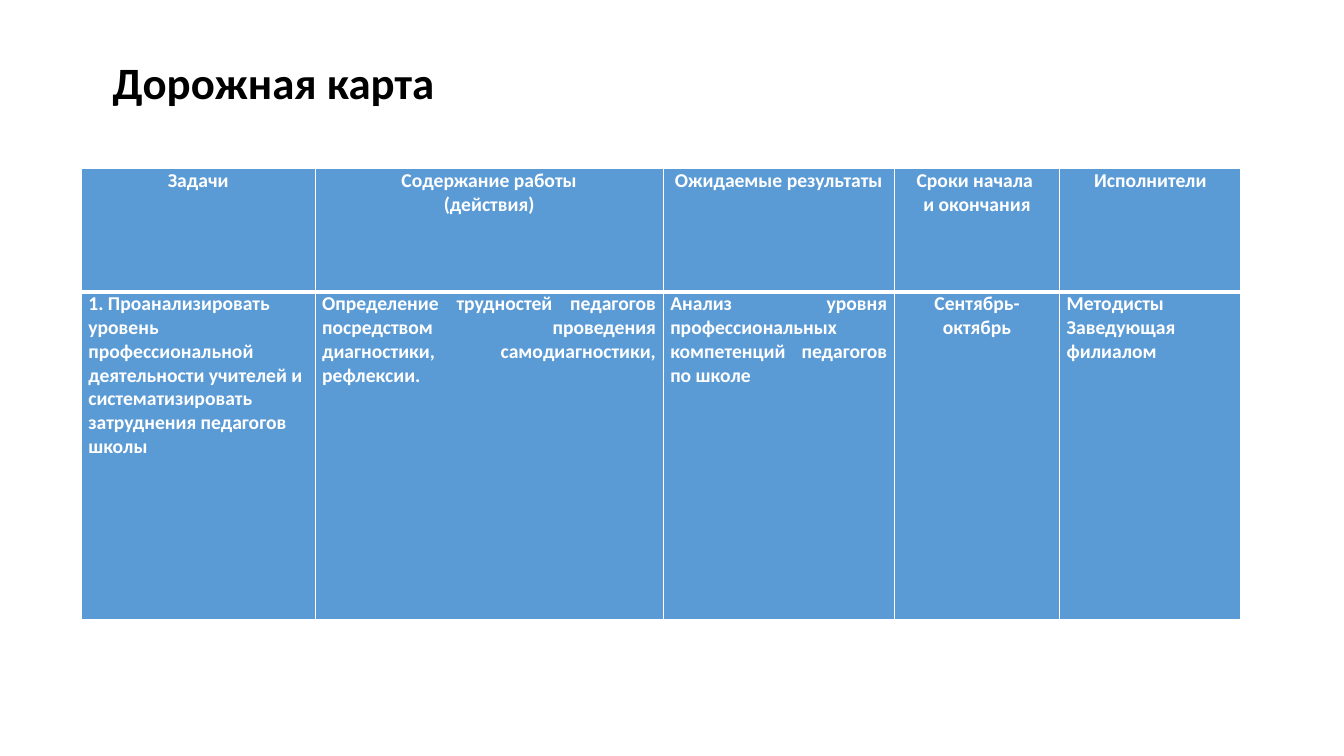
from lxml.etree import SubElement
from pptx import Presentation
from pptx.dml.color import RGBColor
from pptx.enum.text import MSO_ANCHOR, PP_ALIGN
from pptx.oxml.ns import qn
from pptx.util import Inches, Pt

LEFT, CENTER, JUSTIFY = PP_ALIGN.LEFT, PP_ALIGN.CENTER, PP_ALIGN.JUSTIFY
WHITE, BLUE, BLACK = "FFFFFF", "5B9BD5", "000000"

HEADINGS = [
    (CENTER, ["Задачи"]),
    (CENTER, ["Содержание работы", "(действия)"]),
    (CENTER, ["Ожидаемые результаты"]),
    (CENTER, ["Сроки начала ", "и окончания"]),
    (CENTER, ["Исполнители"]),
]
FIRST_TASK = [
    (LEFT, ["1. Проанализировать уровень профессиональной деятельности "
            "учителей и систематизировать затруднения педагогов школы"]),
    (JUSTIFY, ["Определение трудностей педагогов посредством проведения "
               "диагностики, самодиагностики, рефлексии."]),
    (JUSTIFY, ["Анализ уровня профессиональных компетенций педагогов по школе"]),
    (CENTER, ["Сентябрь-октябрь"]),
    (JUSTIFY, ["Методисты", "Заведующая филиалом"]),
]


def color(value):
    return RGBColor.from_string(value)


class RoadmapSlide:
    font = "Calibri"

    def __init__(self, deck):
        self.width, self.height = deck.slide_width, deck.slide_height
        self.slide = deck.slides.add_slide(deck.slide_layouts[6])

    def across(self, percent):
        return round(self.width * percent / 100)

    def down(self, percent):
        return round(self.height * percent / 100)

    def add_lines(self, frame, lines, size, ink, align=LEFT, spacing=1.0):
        frame.word_wrap = True
        for index, line in enumerate(lines):
            paragraph = frame.paragraphs[0] if index == 0 else frame.add_paragraph()
            paragraph.alignment = align
            paragraph.line_spacing = spacing
            run = paragraph.add_run()
            run.text = line
            run.font.name = self.font
            run.font.size = Pt(size)
            run.font.bold = True
            run.font.color.rgb = color(ink)

    def title(self, text, left, top, width, height):
        heading = self.slide.shapes.add_textbox(
            self.across(left), self.down(top), self.across(width), self.down(height))
        heading.text_frame.vertical_anchor = MSO_ANCHOR.MIDDLE
        self.add_lines(heading.text_frame, [text], 32, BLACK, spacing=0.9)

    def border(self, cell, side, points):
        line = SubElement(cell._tc.get_or_add_tcPr(), qn(f"a:ln{side}"), w=str(Pt(points)))
        fill = SubElement(line, qn("a:solidFill"))
        SubElement(fill, qn("a:srgbClr"), val=WHITE)

    def cell(self, cell, align, lines, top_line, bottom_line):
        cell.margin_left = cell.margin_right = Inches(0.07)
        cell.margin_top = cell.margin_bottom = 0
        for side, points in zip("LRTB", (1, 1, top_line, bottom_line)):
            self.border(cell, side, points)
        cell.fill.solid()
        cell.fill.fore_color.rgb = color(BLUE)
        self.add_lines(cell.text_frame, lines, 14, WHITE, align)

    def table(self, rows, left, top, widths, heights):
        plan = self.slide.shapes.add_table(
            len(rows), len(widths), self.across(left), self.down(top),
            self.across(sum(widths)), self.down(sum(heights))).table
        for column, width in zip(plan.columns, widths):
            column.width = self.across(width)
        for index, (row, height) in enumerate(zip(rows, heights)):
            plan.rows[index].height = self.down(height)
            rules = (1, 3) if index == 0 else (3, 1)
            for cell, (align, lines) in zip(plan.rows[index].cells, row):
                self.cell(cell, align, lines, *rules)


def main():
    deck = Presentation()
    deck.slide_width, deck.slide_height = Inches(13.33), Inches(7.5)
    roadmap = RoadmapSlide(deck)
    roadmap.title("Дорожная карта", 7.65, 5.3, 80, 12)
    roadmap.table([HEADINGS, FIRST_TASK], 6.05, 22.3,
                  [17.4, 25.9, 17.2, 12.3, 13.5], [16.3, 43.3])
    deck.save("out.pptx")


if __name__ == "__main__":
    main()
